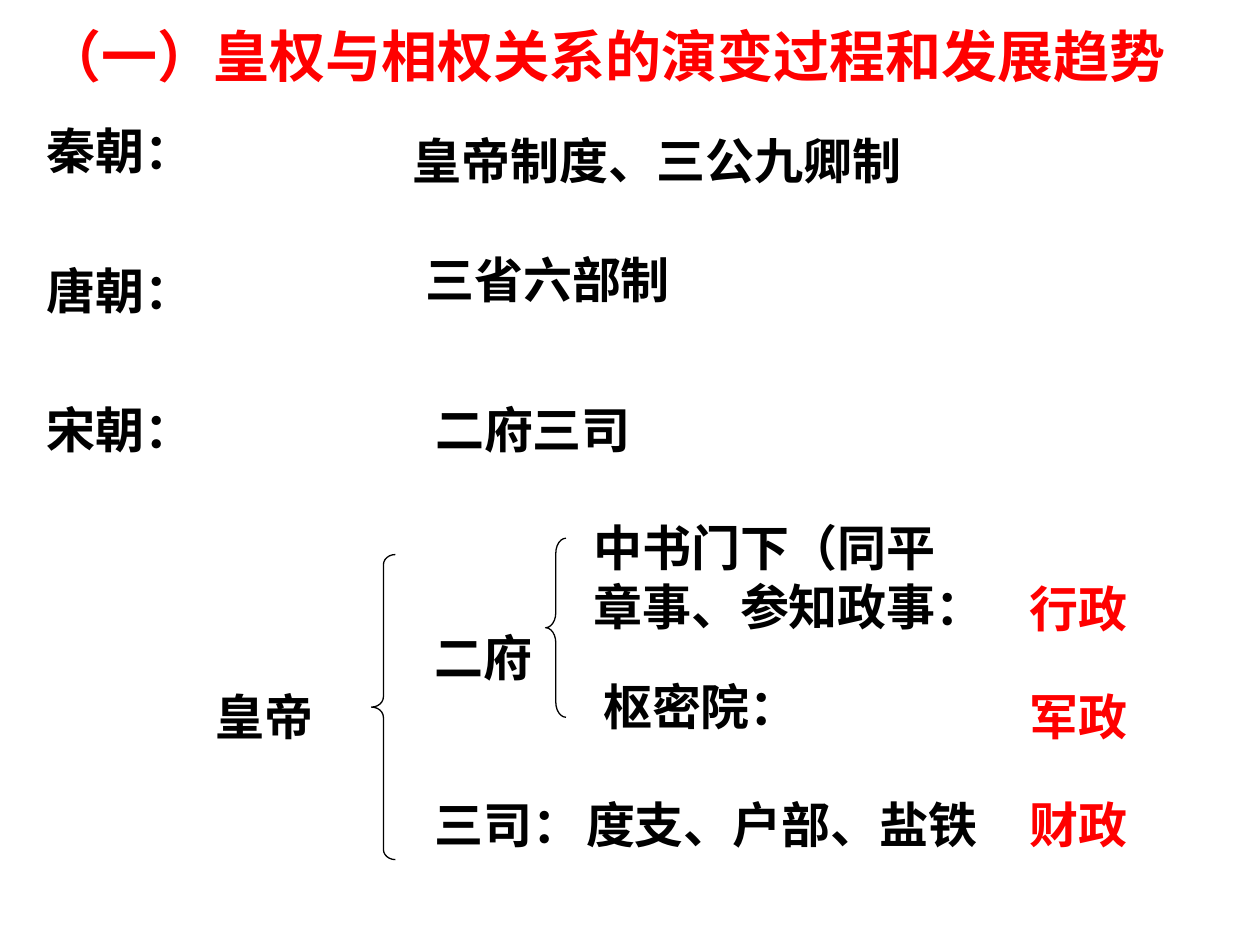
import pptx
import pptx.dml.color
import pptx.enum.shapes
import pptx.enum.text
import pptx.oxml.ns
import pptx.util
from lxml import etree

Cm = pptx.util.Cm
Pt = pptx.util.Pt
ALIGN = pptx.enum.text.PP_ALIGN

COLORS = {"text": "000000", "accent": "FF0000", "background": "FFFFFF"}


class HistorySlide:
    """Holds the text style and the current slide."""

    font = "Noto Sans CJK SC"
    row_height = 1.45

    def __init__(self, deck):
        self.slide = deck.slides.add_slide(deck.slide_layouts[5])
        fill = self.slide.background.fill
        fill.solid()
        fill.fore_color.rgb = self.color("background")

    def color(self, key):
        return pptx.dml.color.RGBColor.from_string(COLORS[key])

    def place(self, shape, left, top, width, height):
        shape.left, shape.top = Cm(left), Cm(top)
        shape.width, shape.height = Cm(width), Cm(height)

    def fill_text(self, shape, wording, size, color, align, wrap):
        frame = shape.text_frame
        frame.word_wrap = wrap
        frame.auto_size = pptx.enum.text.MSO_AUTO_SIZE.SHAPE_TO_FIT_TEXT
        frame.vertical_anchor = pptx.enum.text.MSO_ANCHOR.TOP
        paragraph = frame.paragraphs[0]
        paragraph.alignment = align
        run = paragraph.add_run()
        run.text = wording
        run.font.size = Pt(size)
        run.font.bold = True
        run.font.color.rgb = self.color(color)
        run.font.name = self.font
        east_asian = etree.SubElement(run.font._element, pptx.oxml.ns.qn("a:ea"))
        east_asian.set("typeface", self.font)

    def title(self, wording, left, top, width, height):
        heading = self.slide.shapes.title
        self.place(heading, left, top, width, height)
        self.fill_text(heading, wording, 32, "accent", ALIGN.LEFT, False)

    def label(self, wording, left, top, width, height=row_height,
              color="text", align=ALIGN.LEFT, wrap=False):
        box = self.slide.shapes.add_textbox(Cm(left), Cm(top), Cm(width), Cm(height))
        self.fill_text(box, wording, 28, color, align, wrap)

    def column(self, wordings, left, top, step, width, color="text"):
        for row, wording in enumerate(wordings):
            self.label(wording, left, top + row * step, width, color=color)

    def brace(self, left, top, width, height, curl):
        brace = self.slide.shapes.add_shape(
            pptx.enum.shapes.MSO_SHAPE.LEFT_BRACE,
            Cm(left), Cm(top), Cm(width), Cm(height))
        brace.adjustments[0] = curl
        brace.adjustments[1] = 0.5
        brace.shadow.inherit = False
        brace.fill.background()
        brace.line.color.rgb = self.color("text")
        brace.line.width = Pt(0.75)


def main():
    """Build the slide on emperors and chancellors."""
    deck = pptx.Presentation()
    deck.slide_width, deck.slide_height = Cm(25.4), Cm(19.05)
    page = HistorySlide(deck)

    page.title("（一）皇权与相权关系的演变过程和发展趋势", 0.66, 0.3, 23.19, 1.63)
    page.column(["秦朝：", "唐朝：", "宋朝："], 0.69, 2.31, 2.81, 3.48)

    page.label("皇帝制度、三公九卿制", 7.9, 2.51, 10.69, align=ALIGN.CENTER, wrap=True)
    page.label("三省六部制", 8.31, 4.9, 5.46, align=ALIGN.CENTER)
    page.label("二府三司", 8.51, 7.92, 4.47, align=ALIGN.CENTER)

    page.label("皇帝", 4.09, 13.72, 2.49, align=ALIGN.CENTER)
    page.brace(7.49, 11.18, 0.48, 6.15, 0.43)
    page.label("二府", 8.51, 12.52, 2.49)
    page.brace(11, 10.85, 0.41, 3.61, 0.75)
    page.label("中书门下（同平章事、参知政事：", 11.71, 10.31, 8.1, 2.62, wrap=True)
    page.label("枢密院：", 11.91, 13.51, 4.47)
    page.label("三司：", 8.51, 15.9, 3.48)
    page.label("度支、户部、盐铁", 11.53, 15.9, 8.46, align=ALIGN.CENTER)
    page.column(["行政", "军政", "财政"], 20.5, 11.53, 2.18, 2.49, "accent")

    deck.save("out.pptx")


if __name__ == "__main__":
    main()
